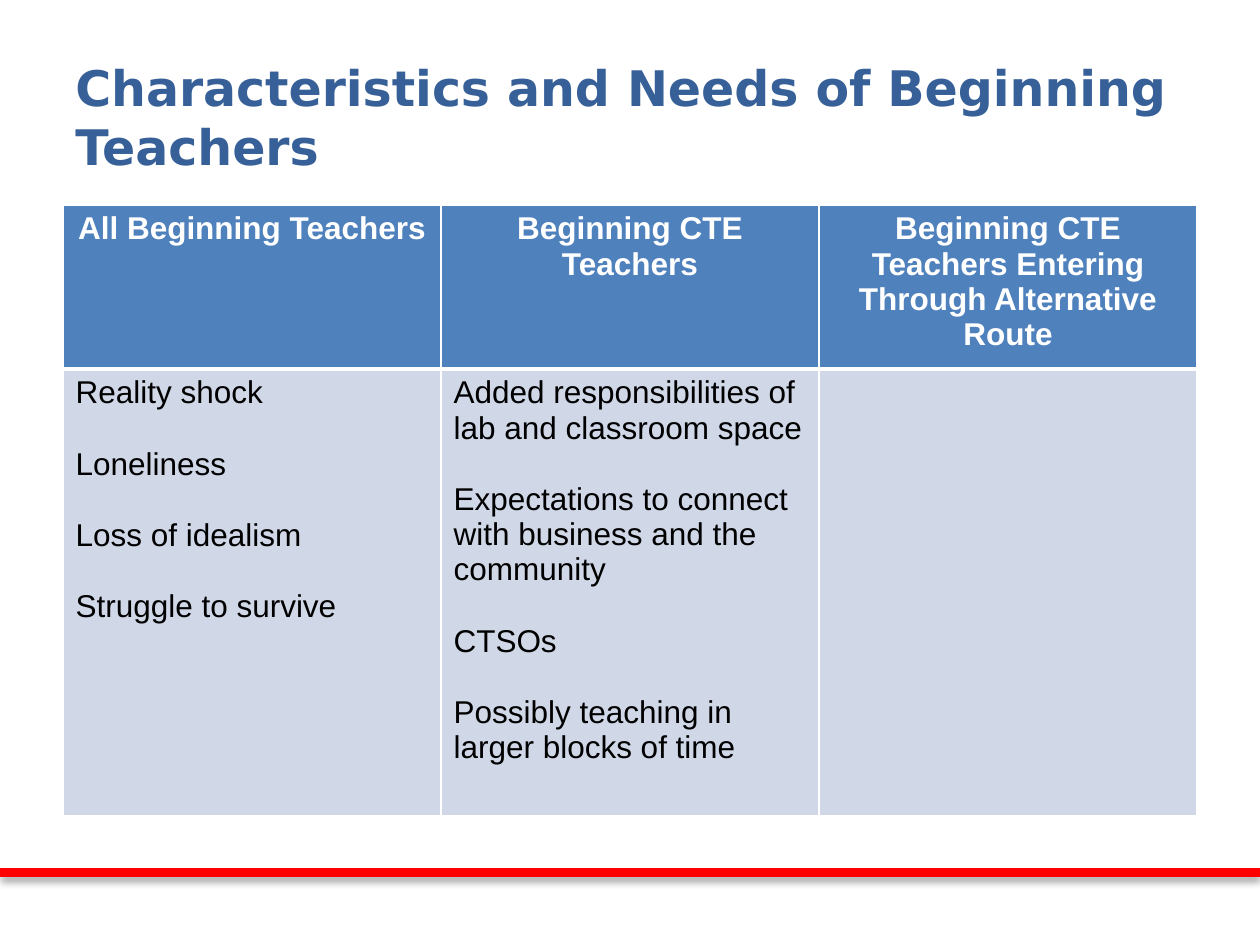
from lxml.etree import SubElement
from pptx import Presentation
from pptx.dml.color import RGBColor
from pptx.enum.shapes import MSO_CONNECTOR
from pptx.enum.text import MSO_ANCHOR, PP_ALIGN
from pptx.oxml import parse_xml
from pptx.oxml.ns import nsdecls, qn
from pptx.util import Inches, Pt

WIDTH, HEIGHT = Inches(10), Inches(7.5)
MARGIN, CONTENT = 0.05, 0.9
HEADINGS = [
    "All Beginning Teachers",
    "Beginning CTE Teachers",
    "Beginning CTE Teachers Entering Through Alternative Route",
]
NEEDS = [
    ["Reality shock", "Loneliness", "Loss of idealism", "Struggle to survive"],
    [
        "Added responsibilities of lab and classroom space",
        "Expectations to connect with business and the community",
        "CTSOs",
        "Possibly teaching in larger blocks of time",
    ],
    [],
]


def color(value):
    """Turn a hex string into a colour."""
    return RGBColor.from_string(value)


def across(share):
    """Give a share of the slide's width."""
    return int(WIDTH * share)


def down(share):
    """Give a share of the slide's height."""
    return int(HEIGHT * share)


def style(font, face, size, ink, bold):
    """Set the look of a font."""
    font.name, font.size, font.bold = face, Pt(size), bold
    font.color.rgb = color(ink)


def add_rule(slide):
    """Draw the red footer rule with its soft shadow."""
    height = down(0.923)
    rule = slide.shapes.add_connector(MSO_CONNECTOR.STRAIGHT, 0, height, WIDTH, height)
    rule.line.color.rgb = color("FF0000")
    rule.line.width = Pt(5)
    effects = SubElement(rule._element.spPr, qn("a:effectLst"))
    effects.append(parse_xml(
        f'<a:outerShdw {nsdecls("a")} blurRad="{Pt(4)}" dist="{Pt(3)}" dir="5400000" rotWithShape="0">'
        '<a:srgbClr val="000000"><a:alpha val="35000"/></a:srgbClr></a:outerShdw>'
    ))


def add_title(slide, text):
    """Write the slide title."""
    title = slide.shapes.add_textbox(across(MARGIN), down(0.04), across(CONTENT), down(1 / 6))
    frame = title.text_frame
    frame.word_wrap = True
    frame.vertical_anchor = MSO_ANCHOR.MIDDLE
    frame.text = text
    style(frame.paragraphs[0].runs[0].font, "DejaVu Sans", 28, "376098", True)


def add_borders(cell, top, bottom):
    """Give a cell white borders, with its own top and bottom widths."""
    properties = cell._tc.get_or_add_tcPr()
    for index, (side, width) in enumerate(zip("LRTB", (1, 1, top, bottom))):
        properties.insert(index, parse_xml(
            f'<a:ln{side} {nsdecls("a")} w="{Pt(width)}"><a:solidFill>'
            f'<a:srgbClr val="FFFFFF"/></a:solidFill></a:ln{side}>'
        ))


def fill_cell(cell, lines, fill, ink, bold, align):
    """Fill a cell with spaced paragraphs."""
    cell.fill.solid()
    cell.fill.fore_color.rgb = color(fill)
    cell.text_frame.text = "\n".join(lines)
    for index, paragraph in enumerate(cell.text_frame.paragraphs):
        paragraph.alignment = align
        style(paragraph.font, "Arial", 18, ink, bold)
        if index:
            paragraph.space_before = Pt(20.6)
        for run in paragraph.runs:
            style(run.font, "Arial", 18, ink, bold)


def add_needs_table(slide):
    """Lay out the needs of each group of teachers."""
    row_shares = (0.161, 0.473)
    table = slide.shapes.add_table(
        2, len(HEADINGS), across(MARGIN), down(0.217), across(CONTENT), down(sum(row_shares))
    ).table
    for row, share in zip(table.rows, row_shares):
        row.height = down(share)
    for column, (heading, needs) in enumerate(zip(HEADINGS, NEEDS)):
        header, body = table.cell(0, column), table.cell(1, column)
        fill_cell(header, [heading], "4F81BD", "FFFFFF", True, PP_ALIGN.CENTER)
        fill_cell(body, needs, "D0D8E8", "000000", False, PP_ALIGN.LEFT)
        add_borders(header, 1, 3)
        add_borders(body, 3, 1)


def main():
    """Build and save the slide."""
    deck = Presentation()
    deck.slide_width, deck.slide_height = WIDTH, HEIGHT
    slide = deck.slides.add_slide(deck.slide_layouts[6])
    add_rule(slide)
    add_title(slide, "Characteristics and Needs of Beginning Teachers")
    add_needs_table(slide)
    deck.save("out.pptx")


if __name__ == "__main__":
    main()
